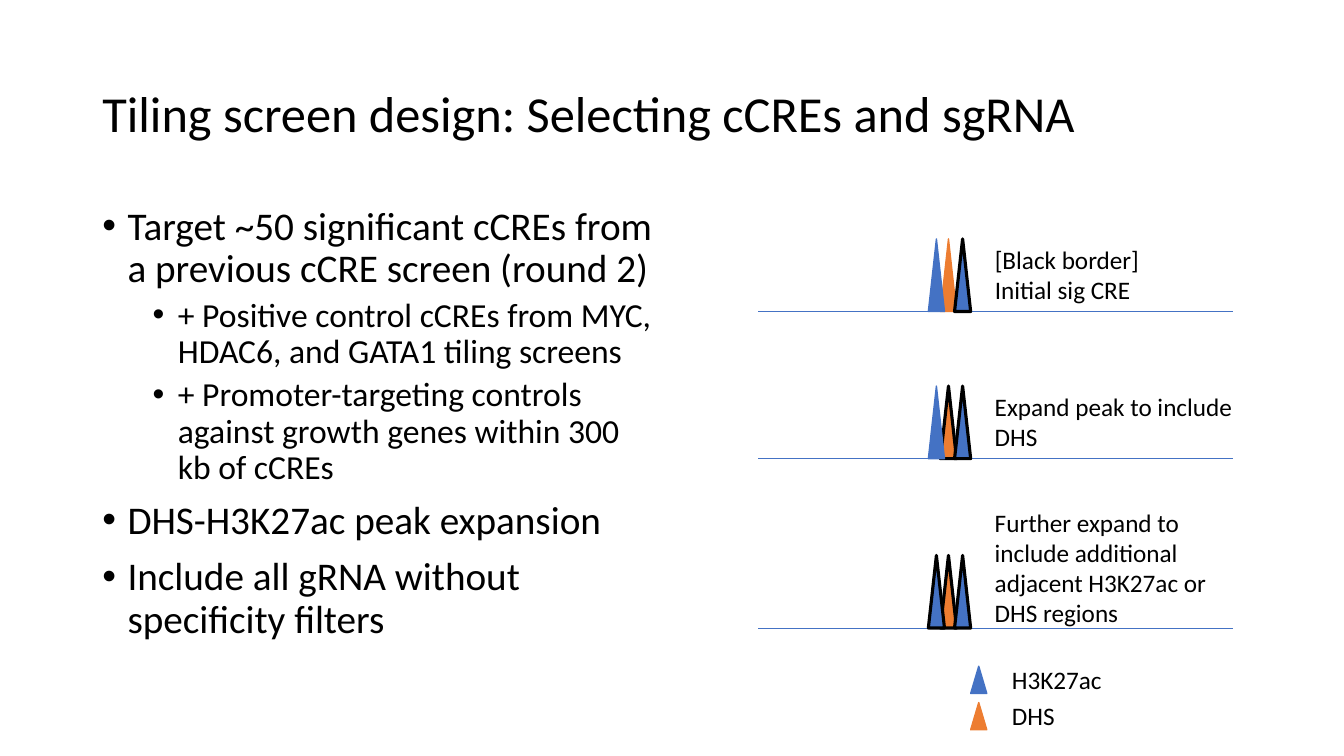
import lxml.etree
import pptx
import pptx.dml.color
import pptx.enum.shapes
import pptx.enum.text
import pptx.oxml.ns
import pptx.util

BLACK, BLUE, ORANGE = "000000", "4472C4", "ED7D31"
COLUMNS, ROWS = 80, 45

# Peak geometry, in grid columns and rows
PEAK_WIDTH, PEAK_HEIGHT, LEGEND_HEIGHT = 0.96, 4.32, 1.62
# Left edge, fill; the middle orange peak lies at the back
PEAKS = {"middle": (55.98, ORANGE), "left": (55.26, BLUE), "right": (56.82, BLUE)}

# Baseline row, selected peaks, label, label row, label width and height
STAGES = [
    (18.54, {"right"}, "[Black border] Initial sig CRE", 14.22, 10.38, 4.26),
    (27.3, {"right", "middle"}, "Expand peak to include DHS", 22.98, 15.48, 4.26),
    (37.38, {"right", "middle", "left"},
     "Further expand to include additional adjacent H3K27ac or DHS regions",
     29.88, 15.48, 7.86),
]
LEGEND = [("H3K27ac", BLUE), ("DHS", ORANGE)]
LEGEND_TOP, LEGEND_STEP = 39.66, 2.16

POINTS = [
    (0, "Target ~50 significant cCREs from a previous cCRE screen (round 2)"),
    (1, "+ Positive control cCREs from MYC, HDAC6, and GATA1 tiling screens"),
    (1, "+ Promoter-targeting controls against growth genes within 300 kb of cCREs"),
    (0, "DHS-H3K27ac peak expansion"),
    (0, "Include all gRNA without specificity filters"),
]
# Size, space before and left margin (inches) of each bullet level
LEVELS = [(28, 10, 0.25), (24, 5, 0.75)]


def rgb(colour):
    return pptx.dml.color.RGBColor.from_string(colour)


def apply(target, values):
    for attribute, value in values.items():
        setattr(target, attribute, value)


class SlideBuilder:
    """Draws on one slide; all places are in grid columns and rows."""

    font_name = "Calibri"

    def __init__(self, deck):
        self.column = deck.slide_width / COLUMNS
        self.row = deck.slide_height / ROWS
        self.shapes = deck.slides.add_slide(deck.slide_layouts[6]).shapes

    def place(self, left, top, width, height):
        return (round(left * self.column), round(top * self.row),
                round(width * self.column), round(height * self.row))

    def frame(self, area, anchor=pptx.enum.text.MSO_ANCHOR.TOP):
        frame = self.shapes.add_textbox(*self.place(*area)).text_frame
        apply(frame, {"word_wrap": True, "vertical_anchor": anchor})
        return frame

    def add_words(self, paragraph, words, size):
        run = paragraph.add_run()
        run.text = words
        apply(run.font, {"name": self.font_name, "size": pptx.util.Pt(size)})
        run.font.color.rgb = rgb(BLACK)

    def title(self, area, words):
        paragraph = self.frame(area, pptx.enum.text.MSO_ANCHOR.MIDDLE).paragraphs[0]
        paragraph.line_spacing = 0.9
        self.add_words(paragraph, words, 36)

    def label(self, area, words):
        self.add_words(self.frame(area).paragraphs[0], words, 18)

    def bullets(self, area, points):
        frame = self.frame(area)
        for index, (level, words) in enumerate(points):
            size, before, margin = LEVELS[level]
            paragraph = frame.add_paragraph() if index else frame.paragraphs[0]
            properties = paragraph._p.get_or_add_pPr()
            properties.set("marL", str(pptx.util.Inches(margin)))
            properties.set("indent", str(pptx.util.Inches(-0.25)))
            for tag, key, value in (("a:buFont", "typeface", "Arial"),
                                    ("a:buChar", "char", "•")):
                lxml.etree.SubElement(properties, pptx.oxml.ns.qn(tag)).set(key, value)
            apply(paragraph, {"level": level, "line_spacing": 0.9})
            if index:
                paragraph.space_before = pptx.util.Pt(before)
            self.add_words(paragraph, words, size)

    def baseline(self, left, right, row):
        x, y, width, _ = self.place(left, row, right - left, 0)
        line = self.shapes.add_connector(
            pptx.enum.shapes.MSO_CONNECTOR.STRAIGHT, x, y, x + width, y)
        line.line.color.rgb = rgb(BLUE)
        line.line.width = pptx.util.Pt(0.5)
        lxml.etree.SubElement(line._element.spPr, pptx.oxml.ns.qn("a:effectLst"))

    def peak(self, left, top, height, fill, selected=False):
        """A triangle, with a heavy black border when selected."""
        triangle = self.shapes.add_shape(
            pptx.enum.shapes.MSO_SHAPE.ISOSCELES_TRIANGLE,
            *self.place(left, top, PEAK_WIDTH, height))
        triangle.shadow.inherit = False
        triangle.fill.solid()
        triangle.fill.fore_color.rgb = rgb(fill)
        triangle.line.color.rgb = rgb(BLACK if selected else fill)
        triangle.line.width = pptx.util.Pt(2.25 if selected else 1)


def main():
    deck = pptx.Presentation()
    apply(deck, {"slide_width": pptx.util.Inches(13.33),
                 "slide_height": pptx.util.Inches(7.5)})
    slide = SlideBuilder(deck)

    slide.title((5.5, 2.58, 69, 8.7), "Tiling screen design: Selecting cCREs and sgRNA")
    slide.bullets((5.5, 12, 34, 28.56), POINTS)

    for base, selected, words, top, width, height in STAGES:
        slide.baseline(45.12, 73.38, base)
        for position, (left, fill) in PEAKS.items():
            slide.peak(left, base - PEAK_HEIGHT, PEAK_HEIGHT, fill, position in selected)
        slide.label((58.62, top, width, height), words)

    for index, (words, fill) in enumerate(LEGEND):
        top = LEGEND_TOP + index * LEGEND_STEP
        slide.peak(57.78, top, LEGEND_HEIGHT, fill)
        slide.label((59.64, top - 0.42, 6.6, 2.4), words)

    deck.save("out.pptx")


if __name__ == "__main__":
    main()
